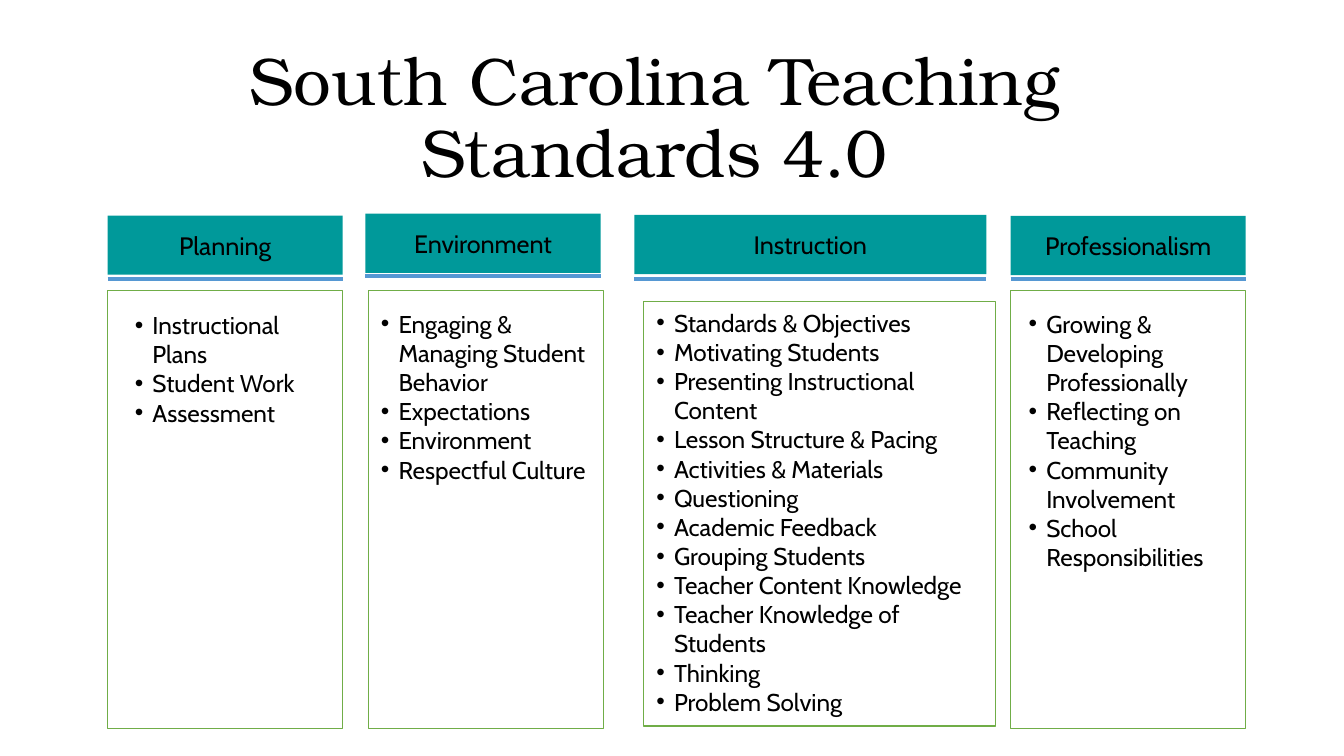
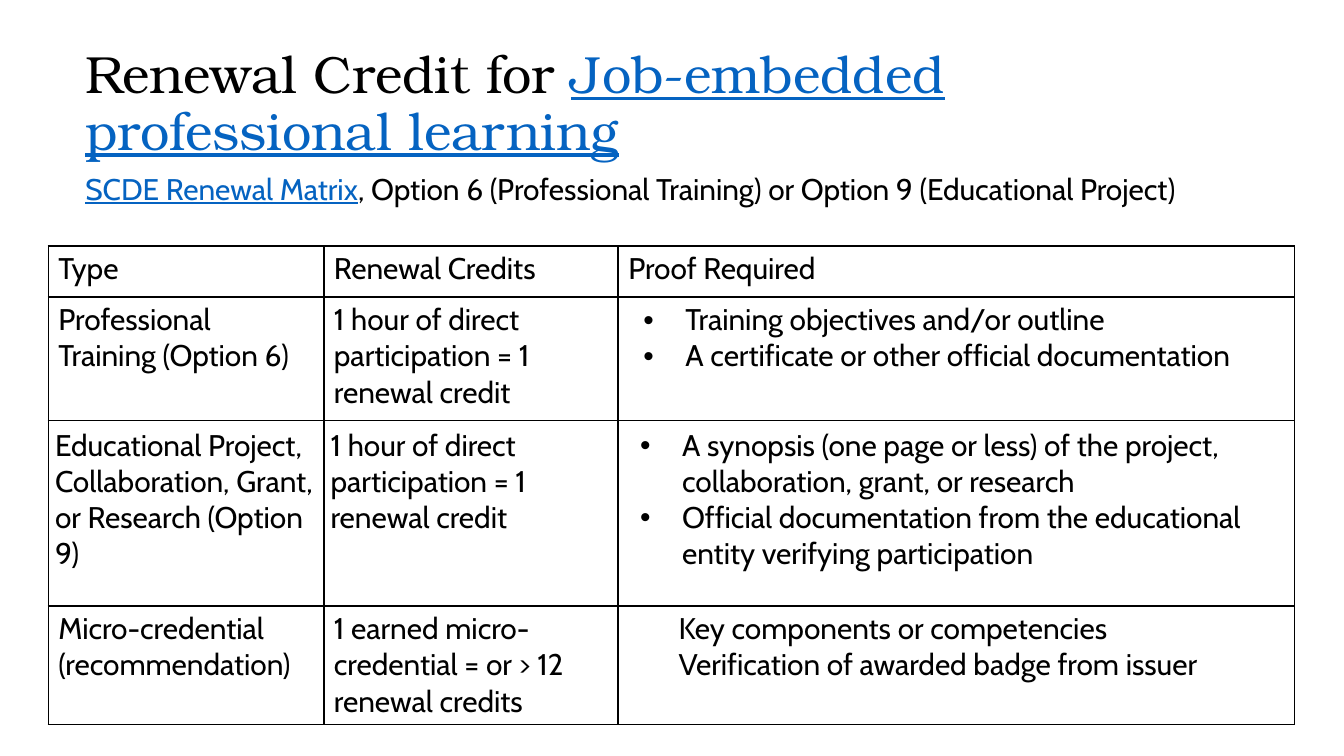
"""Build two slides on teaching standards and renewal credits."""
from lxml import etree
from pptx import Presentation
from pptx.dml.color import RGBColor
from pptx.enum.shapes import MSO_CONNECTOR, MSO_SHAPE
from pptx.enum.text import MSO_ANCHOR, MSO_AUTO_SIZE, PP_ALIGN
from pptx.oxml.ns import qn
from pptx.util import Pt

RECTANGLE = MSO_SHAPE.RECTANGLE
STRAIGHT = MSO_CONNECTOR.STRAIGHT
TOP, MIDDLE = MSO_ANCHOR.TOP, MSO_ANCHOR.MIDDLE
LEFT, CENTER = PP_ALIGN.LEFT, PP_ALIGN.CENTER
NO_AUTOFIT = MSO_AUTO_SIZE.NONE

BLACK = RGBColor(0x00, 0x00, 0x00)
WHITE = RGBColor(0xFF, 0xFF, 0xFF)
TEAL = RGBColor(0x00, 0x99, 0x9A)
GREEN = RGBColor(0x70, 0xAD, 0x47)
BLUE = RGBColor(0x56, 0x98, 0xD3)
LINK_BLUE = RGBColor(0x05, 0x63, 0xC1)
TITLE_FONT, BODY_FONT = "TeX Gyre Bonum", "Cabin"


def set_indent(paragraph, margin, hanging):
    """Indent a paragraph, with a bullet if its first line hangs."""
    properties = paragraph._p.get_or_add_pPr()
    properties.set("marL", str(Pt(margin)))
    properties.set("indent", str(-Pt(hanging)))
    if hanging:
        etree.SubElement(properties, qn("a:buFont"), typeface="Arial")
        etree.SubElement(properties, qn("a:buChar"), char="•")


def write_paragraphs(text_frame, texts, size, font_name=BODY_FONT, alignment=LEFT,
                     margin=0, hanging=0):
    """Write one paragraph per text; a tuple of (text, is_link) pairs gives runs."""
    text_frame.word_wrap = True
    for index, text in enumerate(texts):
        paragraph = text_frame.paragraphs[0] if index == 0 else text_frame.add_paragraph()
        if margin:
            set_indent(paragraph, margin, hanging)
        paragraph.alignment = alignment
        paragraph.font.size = Pt(size)
        paragraph.font.name = font_name
        paragraph.font.color.rgb = BLACK
        for run_text, is_link in [(text, False)] if isinstance(text, str) else text:
            run = paragraph.add_run()
            run.text = run_text
            if is_link:
                run.font.color.rgb = LINK_BLUE
                run.font.underline = True


presentation = Presentation()
presentation.slide_width, presentation.slide_height = Pt(720), Pt(405)

titles = [
    ("South Carolina Teaching Standards 4.0", 36, CENTER, TOP, 7.2, 3.6),
    ((("Renewal Credit for ", False), ("Job-embedded professional learning", True)),
     28, LEFT, MIDDLE, 5.4, 2.7),
]
slides = []
for text, size, alignment, anchor, side_margin, end_margin in titles:
    slide = presentation.slides.add_slide(presentation.slide_layouts[5])
    slides.append(slide)
    title = slide.shapes.title
    title.left, title.top, title.width, title.height = Pt(40.3), Pt(21.6), Pt(620.6), Pt(69.1)
    frame = title.text_frame
    frame.auto_size = NO_AUTOFIT
    frame.vertical_anchor = anchor
    frame.margin_left = frame.margin_right = Pt(side_margin)
    frame.margin_top = frame.margin_bottom = Pt(end_margin)
    write_paragraphs(frame, [text], size, TITLE_FONT, alignment)
    frame.paragraphs[0].line_spacing = 0.9
standards_slide, credit_slide = slides

HEADER_HEIGHT = 31.7
standards = [
    ("Planning", (57.6, 115.5, 126), 149.4, (57.6, 155.5, 234.7), (65.5, 162.7, 111, 71),
     ["Instructional Plans", "Student Work", "Assessment"]),
    ("Environment", (195.8, 114.5, 126), 148, (197.3, 155.5, 234.7), (197.3, 162, 126, 117),
     ["Engaging & Managing Student Behavior", "Expectations", "Environment",
      "Respectful Culture"]),
    ("Instruction", (339.8, 115.2, 188.6), 149.4, (344.9, 161.5, 227.5), None,
     ["Standards & Objectives", "Motivating Students", "Presenting Instructional Content",
      "Lesson Structure & Pacing", "Activities & Materials", "Questioning",
      "Academic Feedback", "Grouping Students", "Teacher Content Knowledge",
      "Teacher Knowledge of Students", "Thinking", "Problem Solving"]),
    ("Professionalism", (541.4, 115.7, 126), 149.4, (541.4, 155.5, 234.7),
     (544.3, 162, 126, 149),
     ["Growing & Developing Professionally", "Reflecting on Teaching",
      "Community Involvement", "School Responsibilities"]),
]
for name, header_place, rule_top, panel_place, list_place, items in standards:
    left, top, width = header_place
    panel_left, panel_top, panel_height = panel_place
    panel = standards_slide.shapes.add_shape(
        RECTANGLE, Pt(panel_left), Pt(panel_top), Pt(width), Pt(panel_height))
    panel.shadow.inherit = False
    panel.fill.solid()
    panel.fill.fore_color.rgb = WHITE
    panel.line.color.rgb = GREEN
    panel.line.width = Pt(0.75)

    list_shape = panel
    if list_place:
        list_shape = standards_slide.shapes.add_textbox(*[Pt(value) for value in list_place])
    frame = list_shape.text_frame
    frame.vertical_anchor = TOP
    frame.margin_left = frame.margin_right = Pt(6.8)
    write_paragraphs(frame, items, 13, margin=9.4, hanging=9.4)

    header = standards_slide.shapes.add_shape(
        RECTANGLE, Pt(left), Pt(top), Pt(width), Pt(HEADER_HEIGHT))
    header.shadow.inherit = False
    header.fill.solid()
    header.fill.fore_color.rgb = TEAL
    header.line.fill.background()
    header.text_frame.vertical_anchor = MIDDLE
    write_paragraphs(header.text_frame, [name], 13.5, alignment=CENTER)

    rule = standards_slide.shapes.add_connector(
        STRAIGHT, Pt(left), Pt(rule_top), Pt(left + width), Pt(rule_top))
    rule.line.color.rgb = BLUE
    rule.line.width = Pt(2.25)
    etree.SubElement(rule._element.spPr, qn("a:effectLst"))

subtitle = credit_slide.shapes.add_textbox(Pt(40.3), Pt(90.7), Pt(620.6), Pt(33.8))
frame = subtitle.text_frame
frame.margin_left = frame.margin_right = Pt(5.4)
frame.margin_top = frame.margin_bottom = Pt(2.7)
write_paragraphs(frame, [(
    ("SCDE Renewal Matrix", True),
    (", Option 6 (Professional Training) or Option 9 (Educational Project)", False))], 16)
frame.paragraphs[0].line_spacing = 0.9

column_widths = [147.6, 157.7, 362.2]
row_heights = [27.4, 66.2, 99.4, 63.4]
hour_credit = "1 hour of direct participation = 1 renewal credit"
credit_rows = [
    [["Type"], ["Renewal Credits"], ["Proof Required"]],
    [["Professional Training (Option 6)"], [hour_credit],
     ["Training objectives and/or outline", "A certificate or other official documentation"]],
    [["Educational Project, Collaboration, Grant, or Research (Option 9)"], [hour_credit],
     ["A synopsis (one page or less) of the project, collaboration, grant, or research",
      "Official documentation from the educational entity verifying participation"]],
    [["Micro-credential", "(recommendation)"],
     ["1 earned micro-credential = or > 12 renewal credits"],
     ["Key components or competencies", "Verification of awarded badge from issuer"]],
]
row_margins = [(5.4, 2.7), (5.4, 2.7), (3.6, 3.6), (5.4, 2.7)]
proof_indents = [(0, 0), (30.6, 22.5), (30.6, 22.5), (27, 0)]

table = credit_slide.shapes.add_table(
    len(row_heights), len(column_widths), Pt(25.9), Pt(131.8),
    Pt(sum(column_widths)), Pt(sum(row_heights))).table
table.first_row = table.horz_banding = False
for column, width in zip(table.columns, column_widths):
    column.width = Pt(width)
for row_index, (row, height) in enumerate(zip(table.rows, row_heights)):
    row.height = Pt(height)
    side_margin, end_margin = row_margins[row_index]
    for column_index, texts in enumerate(credit_rows[row_index]):
        cell = table.cell(row_index, column_index)
        cell.margin_left = cell.margin_right = Pt(side_margin)
        cell.margin_top = cell.margin_bottom = Pt(end_margin)
        margin, hanging = proof_indents[row_index] if column_index == 2 else (0, 0)
        write_paragraphs(cell.text_frame, texts, 16, margin=margin, hanging=hanging)
        cell_properties = cell._tc.get_or_add_tcPr()
        for side in ("lnL", "lnR", "lnT", "lnB"):
            border = etree.SubElement(cell_properties, qn(f"a:{side}"), w=str(Pt(1)))
            border_fill = etree.SubElement(border, qn("a:solidFill"))
            etree.SubElement(border_fill, qn("a:srgbClr"), val=str(BLACK))
        cell.fill.background()

presentation.save("out.pptx")
